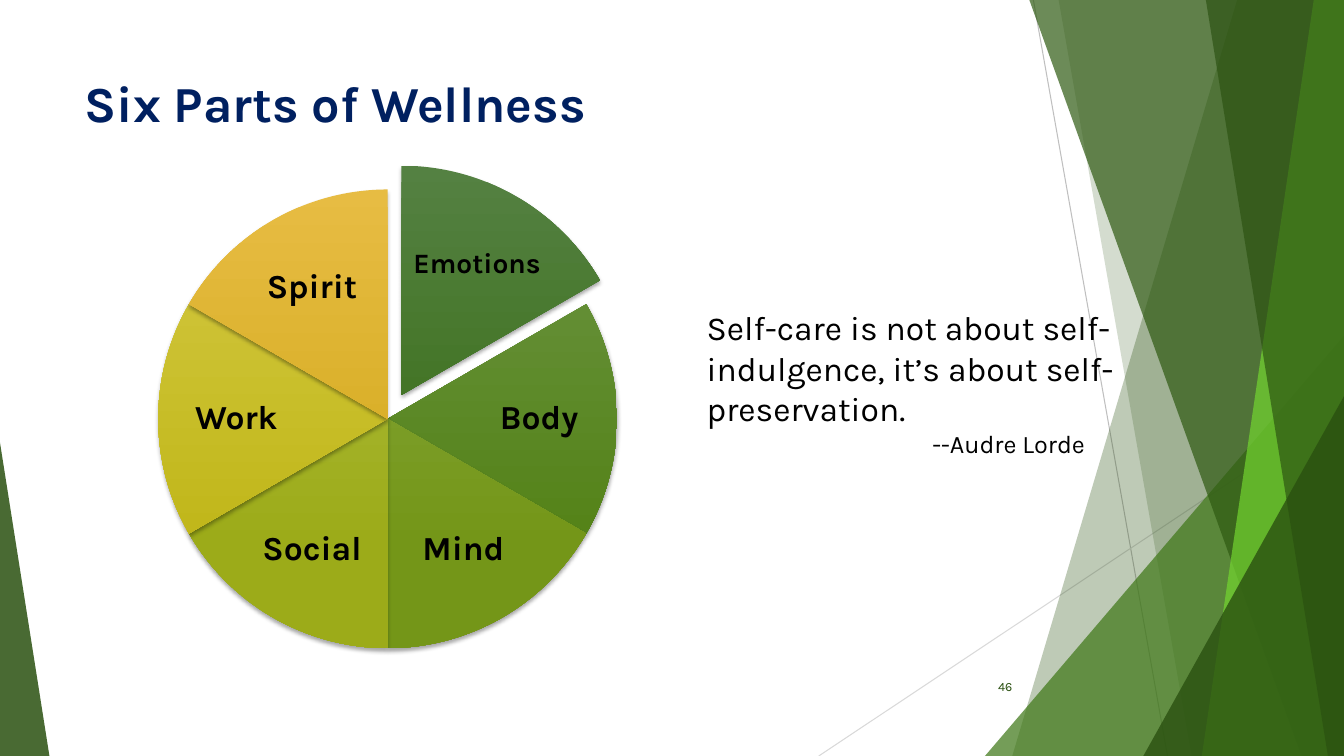
import math
from dataclasses import dataclass

import pptx
import pptx.dml.color
import pptx.enum.dml
import pptx.enum.shapes
import pptx.enum.text
import pptx.oxml
import pptx.oxml.ns
import pptx.util

SHAPE = pptx.enum.shapes.MSO_SHAPE
ALIGN = pptx.enum.text.PP_ALIGN
ANCHOR = pptx.enum.text.MSO_ANCHOR
A_NS = pptx.oxml.ns.nsdecls("a")


@dataclass(frozen=True)
class Theme:
    font: str = "Karla"
    ink: str = "000000"
    title: str = "002060"
    deep: str = "2A5010"
    forest: str = "2F5A12"
    leaf: str = "3F7818"
    lime: str = "73D630"
    ray_dark: str = "BFBFBF"
    ray_light: str = "D9D9D9"
    title_size: int = 36
    label_size: int = 24
    small_label_size: int = 20
    quote_size: int = 24
    author_size: int = 18
    number_size: int = 9


@dataclass(frozen=True)
class Box:
    x: int
    y: int
    w: int
    h: int

    def point(self, x, y):
        return round(self.x + self.w * x / 100), round(self.y + self.h * y / 100)

    def area(self, x, y, w, h):
        left, top = self.point(x, y)
        return Box(left, top, round(self.w * w / 100), round(self.h * h / 100))

    def frame(self):
        return self.x, self.y, self.w, self.h


T = Theme()
SECTORS = [
    ("Emotions", "548142", "3A6E16", T.small_label_size, 6),
    ("Body", "6A9442", "548217", T.label_size, 0),
    ("Mind", "88A942", "749618", T.label_size, 0),
    ("Social", "AFBE43", "9CAB19", T.label_size, 0),
    ("Work", "D4C942", "C0B619", T.label_size, 0),
    ("Spirit", "E7BC43", "D2A91B", T.label_size, 0),
]


def rgb(value):
    return pptx.dml.color.RGBColor.from_string(value)


def add_run(p, text, size, color=T.ink, bold=False):
    r = p.add_run()
    r.text = text
    r.font.name = T.font
    r.font.size = pptx.util.Pt(size)
    r.font.bold = bold
    r.font.color.rgb = rgb(color)


def add_text_frame(s, box):
    tf = s.shapes.add_textbox(*box.frame()).text_frame
    tf.word_wrap = True
    return tf


def paint(sp, color, opacity):
    sp.shadow.inherit = False
    sp.line.fill.background()
    sp.fill.solid()
    sp.fill.fore_color.rgb = rgb(color)
    srgb = sp._element.spPr.find(".//" + pptx.oxml.ns.qn("a:srgbClr"))
    srgb.append(pptx.oxml.parse_xml(f'<a:alpha {A_NS} val="{opacity * 1000}"/>'))


def add_ray(s, box, start, end, color):
    cx = s.shapes.add_connector(
        pptx.enum.shapes.MSO_CONNECTOR.STRAIGHT, *box.point(*start), *box.point(*end))
    cx.line.color.rgb = rgb(color)
    cx.line.width = pptx.util.Pt(0.75)
    cx._element.spPr.append(pptx.oxml.parse_xml(f"<a:effectLst {A_NS}/>"))


def add_blade(s, box, top_x, bottom_x, color, opacity):
    builder = s.shapes.build_freeform(*box.point(top_x, 0), scale=1.0)
    builder.add_line_segments(
        [box.point(100, 0), box.point(100, 100), box.point(bottom_x, 100)], close=True)
    paint(builder.convert_to_shape(), color, opacity)


def add_corner(s, box, apex, color, opacity):
    sp = s.shapes.add_shape(SHAPE.ISOSCELES_TRIANGLE, *box.frame())
    sp.adjustments[0] = apex
    paint(sp, color, opacity)


def add_backdrop(s, box):
    add_ray(s, box, (76.89, 0), (86.87, 100), T.ray_dark)
    add_ray(s, box, (100, 53.73), (60.92, 100), T.ray_light)
    add_blade(s, box, 92.05, 75.32, T.deep, 30)
    add_blade(s, box, 78.77, 88.67, T.deep, 20)
    add_corner(s, box.area(73.29, 44.4, 26.71, 55.6), 1, T.leaf, 72)
    add_blade(s, box, 76.59, 96.85, T.forest, 70)
    add_blade(s, box, 97.75, 89.42, T.lime, 70)
    add_blade(s, box, 89.72, 98.8, T.deep, 65)
    add_corner(s, box.area(85.07, 52.4, 14.93, 47.6), 1, T.deep, 80)
    add_corner(s, box.area(0, 58.53, 3.68, 41.47), 0, T.deep, 85)


def add_title(s, box, text):
    title = s.shapes.title
    title.left, title.top, title.width, title.height = box.frame()
    s.shapes._spTree.append(title._element)
    tf = title.text_frame
    tf.auto_size = pptx.enum.text.MSO_AUTO_SIZE.NONE
    tf.vertical_anchor = ANCHOR.TOP
    p = tf.paragraphs[0]
    p.alignment = ALIGN.LEFT
    add_run(p, text, T.title_size, T.title, True)


def add_sector(s, box, start, end, top_color, bottom_color):
    sp = s.shapes.add_shape(SHAPE.PIE, *box.frame())
    sp.adjustments[0], sp.adjustments[1] = start, end
    sp.line.fill.background()
    sp.fill.gradient()
    sp.fill.gradient_angle = 270
    for stop, color, position in zip(
            sp.fill.gradient_stops, (top_color, bottom_color), (0, 0.78)):
        stop.color.rgb = rgb(color)
        stop.position = position
    sp._element.spPr.append(pptx.oxml.parse_xml(
        f'<a:effectLst {A_NS}><a:outerShdw blurRad="38100" dist="25400" dir="5400000" '
        'rotWithShape="0"><a:srgbClr val="000000"><a:alpha val="35000"/></a:srgbClr>'
        '</a:outerShdw></a:effectLst>'))


def add_sector_label(s, box, text, size):
    tf = add_text_frame(s, box)
    tf.vertical_anchor = ANCHOR.MIDDLE
    tf.margin_left = tf.margin_right = pptx.util.Inches(0.03)
    tf.margin_top = tf.margin_bottom = pptx.util.Inches(0.03)
    p = tf.paragraphs[0]
    p.alignment = ALIGN.CENTER
    p.line_spacing = 0.9
    add_run(p, text, size, bold=True)


def add_wheel(s, box):
    turn = 216
    step = turn / len(SECTORS)
    label_w, label_h = 30, 21
    for i, (text, top_color, bottom_color, size, shift) in enumerate(SECTORS):
        start = (turn * 3 / 4 + i * step) % turn
        middle = math.tau * (start + step / 2) / turn
        dx, dy = math.cos(middle), math.sin(middle)
        sector_box = box.area(shift * dx, shift * dy, 100, 100)
        add_sector(s, sector_box, start, (start + step) % turn, top_color, bottom_color)
        label_box = sector_box.area(
            50 + 33 * dx - label_w / 2, 50 + 33 * dy - label_h / 2, label_w, label_h)
        add_sector_label(s, label_box, text, size)


def add_quote(s, box, quote, author):
    tf = add_text_frame(s, box)
    add_run(tf.paragraphs[0], quote, T.quote_size)
    p = tf.add_paragraph()
    p._p.get_or_add_pPr().set("marL", str(round(box.w * 0.42)))
    add_run(p, author, T.author_size)


def add_number(s, box, text):
    tf = add_text_frame(s, box)
    tf.vertical_anchor = ANCHOR.MIDDLE
    p = tf.paragraphs[0]
    p.alignment = ALIGN.RIGHT
    add_run(p, text, T.number_size, T.deep)


def main():
    prs = pptx.Presentation()
    prs.slide_width = pptx.util.Inches(13.33)
    prs.slide_height = pptx.util.Inches(7.5)
    s = prs.slides.add_slide(prs.slide_layouts[5])
    page = Box(0, 0, prs.slide_width, prs.slide_height)
    add_backdrop(s, page)
    add_title(s, page.area(5.55, 8.93, 70.52, 19.2), "Six Parts of Wellness")
    add_wheel(s, page.area(11.78, 25.07, 34.13, 60.67))
    add_quote(
        s, page.area(51.84, 40, 39.98, 21.6),
        "Self-care is not about self-indulgence, it’s about self-preservation.",
        "--Audre Lorde")
    add_number(s, page.area(70.44, 88.13, 5.63, 5.33), "46")
    prs.save("out.pptx")


if __name__ == "__main__":
    main()
